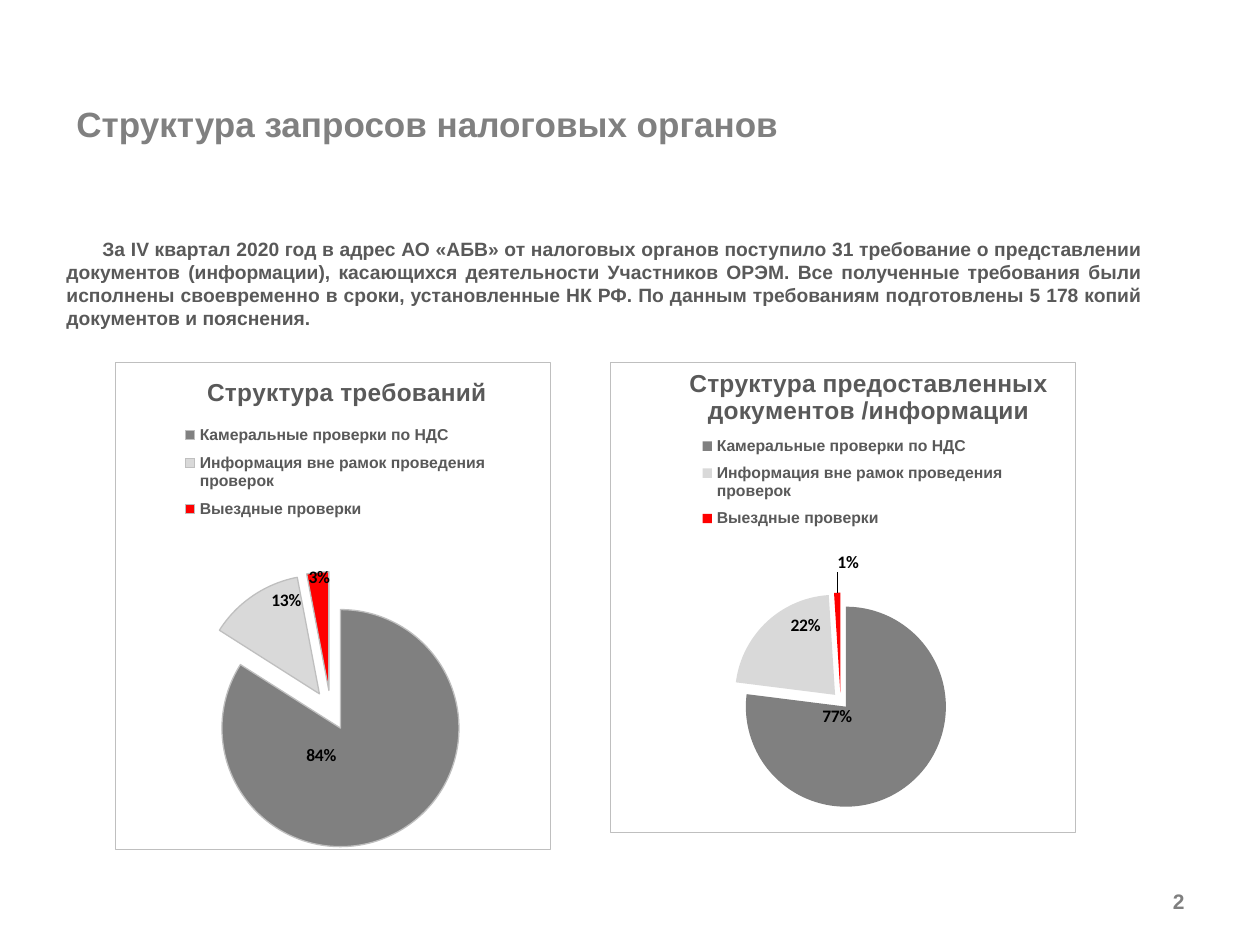
import pptx
import pptx.util
import pptx.chart.data
import pptx.dml.color
import pptx.enum.chart
import pptx.enum.text
import pptx.oxml
import pptx.oxml.ns

PX = 914400 / 126
ALIGN = pptx.enum.text.PP_ALIGN
ANCHOR = pptx.enum.text.MSO_ANCHOR
COLORS = {"dark": "595959", "heading": "808080", "number": "7F7F7F", "black": "000000",
          "border": "BFBFBF", "desk": "808080", "other": "D9D9D9", "field": "FF0000"}

HEADING = "Структура запросов налоговых органов"
BODY = ("За IV квартал 2020 год в адрес АО «АБВ» от налоговых органов поступило 31 требование "
        "о представлении документов (информации), касающихся деятельности Участников ОРЭМ. "
        "Все полученные требования были исполнены своевременно в сроки, установленные НК РФ. "
        "По данным требованиям подготовлены 5 178 копий документов и пояснения.")
CATEGORIES = [("Камеральные проверки по НДС", "desk"),
              ("Информация вне рамок проведения проверок", "other"),
              ("Выездные проверки", "field")]
CHARTS = [
    {"title": "Структура требований", "at": (115, 362, 436, 488), "values": (84, 13, 3),
     "explosion": 17, "outlined": True, "leaders": False, "overlay": False,
     "base": ("Arial", 24, "dark", True),
     "title_at": (0.2, 0.02), "legend_at": (0.14, 0.11, 0.73, 0.23),
     "plot_at": (0.04, 0.43, 0.91, 0.57),
     "label_shifts": [(-0.11, -0.05), (0, -0.09), (-0.01, -0.11)]},
    {"title": "Структура предоставленных документов /информации", "at": (610, 362, 466, 471),
     "values": (77, 22, 1), "explosion": 8, "outlined": False, "leaders": True, "overlay": True,
     "base": ("Calibri", 18, "black", False),
     "title_at": (0.16, 0), "legend_at": (0.17, 0.14, 0.7, 0.23),
     "plot_at": (0.08, 0.49, 0.83, 0.46),
     "label_shifts": [(-0.09, -0.06), (0.01, -0.07), (0.02, -0.17)]},
]


def px(value):
    return pptx.util.Emu(round(value * PX))


def rgb(name):
    return pptx.dml.color.RGBColor.from_string(COLORS[name])


def style(font, name, size, color, bold=True):
    font.name, font.size, font.bold = name, pptx.util.Pt(size), bold
    font.color.rgb = rgb(color)


def add_text(page, text, at, size, color, align=ALIGN.LEFT, anchor=ANCHOR.MIDDLE, indent=0):
    frame = page.shapes.add_textbox(*map(px, at)).text_frame
    frame.word_wrap = True
    frame.vertical_anchor = anchor
    para = frame.paragraphs[0]
    para.alignment = align
    if indent:
        para._p.get_or_add_pPr().set("indent", str(px(indent)))
    span = para.add_run()
    span.text = text
    style(span.font, "Arial", size, color)


def chart_xml(text):
    return pptx.oxml.parse_xml(text.replace(">", " " + pptx.oxml.ns.nsdecls("c", "a") + ">", 1))


def child(parent, tag):
    return parent.find(pptx.oxml.ns.qn("c:" + tag))


def place(parent, after, values, absolute=True, inner=False):
    old = child(parent, "layout")
    if old is not None:
        parent.remove(old)
    keys = ("x", "y", "w", "h")[:len(values)]
    target = '<c:layoutTarget val="inner"/>' if inner else ""
    modes = '<c:xMode val="edge"/><c:yMode val="edge"/>' if absolute else ""
    sizes = "".join(f'<c:{key} val="{value}"/>' for key, value in zip(keys, values))
    layout = chart_xml(f"<c:layout><c:manualLayout>{target}{modes}{sizes}</c:manualLayout></c:layout>")
    if after:
        child(parent, after).addnext(layout)
    else:
        parent.insert(0, layout)


def outline(line):
    line.color.rgb = rgb("border")
    line.width = pptx.util.Pt(0.75)


def add_pie(page, item):
    data = pptx.chart.data.CategoryChartData()
    data.categories = [name for name, color in CATEGORIES]
    data.add_series("Series 1", item["values"])
    chart = page.shapes.add_chart(pptx.enum.chart.XL_CHART_TYPE.PIE,
                                  *map(px, item["at"]), data).chart
    style(chart.font, *item["base"])

    chart.has_title = True
    para = chart.chart_title.text_frame.paragraphs[0]
    span = para.add_run()
    span.text = item["title"]
    style(span.font, "Arial", 14, "dark")
    place(chart.chart_title._element, "tx", item["title_at"])

    chart.has_legend = True
    chart.legend.position = pptx.enum.chart.XL_LEGEND_POSITION.TOP
    chart.legend.include_in_layout = item["overlay"]
    style(chart.legend.font, "Arial", 9, "dark")
    place(chart.legend._element, "legendPos", item["legend_at"])

    space = chart._chartSpace
    place(child(child(space, "chart"), "plotArea"), None, item["plot_at"], inner=True)
    child(space, "chart").addnext(chart_xml(
        '<c:spPr><a:noFill/><a:ln w="9525"><a:solidFill>'
        f'<a:srgbClr val="{COLORS["border"]}"/></a:solidFill></a:ln></c:spPr>'))

    plot = chart.plots[0]
    plot.vary_by_categories = True
    series = plot.series[0]
    center = pptx.enum.chart.XL_LABEL_POSITION.CENTER
    labels = series.data_labels
    labels.show_percentage, labels.show_value = True, False
    labels.position = center
    style(labels.font, "Calibri", 10, "black")
    leaders = child(labels._element, "showLeaderLines")
    if leaders is None:
        leaders = chart_xml("<c:showLeaderLines></c:showLeaderLines>")
        labels._element.append(leaders)
    leaders.set("val", str(int(item["leaders"])))

    series.format.line.fill.background()
    child(series._element, "spPr").addnext(
        chart_xml(f'<c:explosion val="{item["explosion"]}"></c:explosion>'))
    for index, (name, color) in enumerate(CATEGORIES):
        point = series.points[index]
        point.format.fill.solid()
        point.format.fill.fore_color.rgb = rgb(color)
        if item["outlined"]:
            outline(point.format.line)
        else:
            point.format.line.fill.background()
        point.data_label.position = center
        style(point.data_label.font, "Calibri", 10, "black")
    for label, shift in zip(labels._element.findall(pptx.oxml.ns.qn("c:dLbl")), item["label_shifts"]):
        child(label, "showVal").set("val", "0")
        child(label, "showPercent").set("val", "1")
        place(label, "idx", shift, absolute=False)


def main():
    deck = pptx.Presentation()
    deck.slide_width, deck.slide_height = px(1260), px(945)
    page = deck.slides.add_slide(deck.slide_layouts[6])
    add_text(page, BODY, (54, 204, 1101, 158), 11, "dark", align=ALIGN.JUSTIFY, indent=36)
    for item in CHARTS:
        add_pie(page, item)
    add_text(page, "2", (903, 876, 294, 50), 12, "number", align=ALIGN.RIGHT)
    add_text(page, HEADING, (64, 96, 1101, 93), 20, "heading", anchor=ANCHOR.TOP)
    deck.save("out.pptx")


if __name__ == "__main__":
    main()
